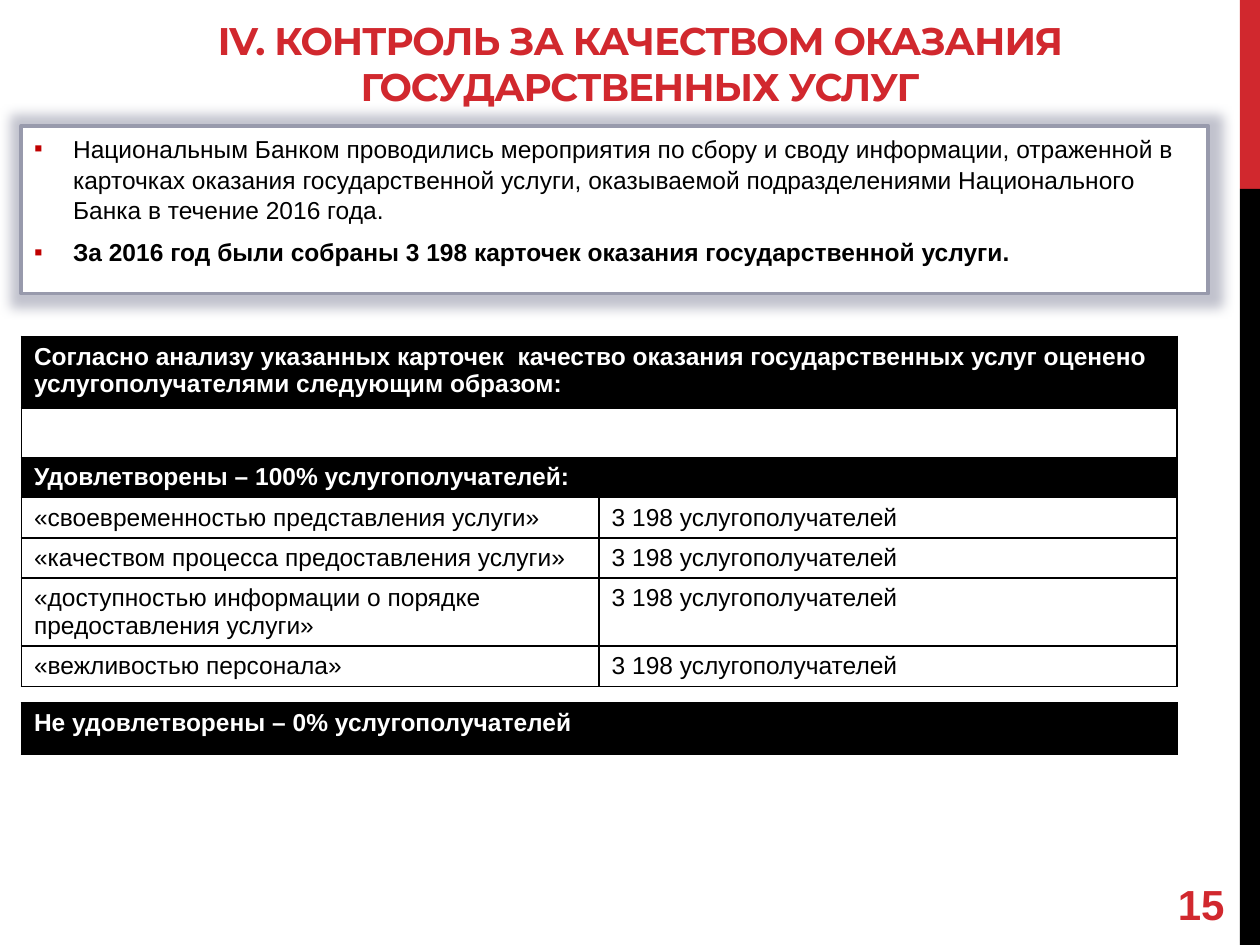
from lxml import etree
from pptx import Presentation
from pptx.dml.color import RGBColor
from pptx.enum import shapes, text
from pptx.oxml import ns
from pptx.util import Inches, Pt

RED = RGBColor(0xD1, 0x28, 0x2E)
BULLET_RED = RGBColor(0xC0, 0x00, 0x00)
BLACK = RGBColor(0, 0, 0)
WHITE = RGBColor(0xFF, 0xFF, 0xFF)
FRAME = RGBColor(0x98, 0x9A, 0xAC)

TITLE = "IV. КОНТРОЛЬ ЗА КАЧЕСТВОМ ОКАЗАНИЯ ГОСУДАРСТВЕННЫХ УСЛУГ"
POINTS = [
    ("Национальным Банком проводились мероприятия по сбору и своду информации, "
     "отраженной в карточках оказания государственной услуги, оказываемой "
     "подразделениями Национального Банка в течение 2016 года.", False),
    ("За 2016 год были собраны 3 198 карточек оказания государственной услуги.", True),
]
COUNT = "3 198 услугополучателей"
# Each row: height, texts (one text spans the row), dark or not
RATINGS = [
    (0.57, ["Согласно анализу указанных карточек  качество оказания государственных "
            "услуг оценено услугополучателями следующим образом:"], True),
    (0.39, [""], False),
    (0.31, ["Удовлетворены – 100% услугополучателей:"], True),
    (0.32, ["«своевременностью представления услуги»", COUNT], False),
    (0.32, ["«качеством процесса предоставления услуги»", COUNT], False),
    (0.54, ["«доступностью информации о порядке предоставления услуги»", COUNT], False),
    (0.32, ["«вежливостью персонала»", COUNT], False),
]
DISSATISFIED = [(0.41, ["Не удовлетворены – 0% услугополучателей"], True)]


def add_xml(parent, tag, **attributes):
    return etree.SubElement(parent, ns.qn(tag), attributes)


def set_box(shape, box):
    for name, length in zip(("left", "top", "width", "height"), box):
        setattr(shape, name, Inches(length))


def format_font(font, color, **values):
    for name, value in {"name": "Arial", "size": Pt(14), "bold": False, **values}.items():
        setattr(font, name, value)
    font.color.rgb = color


def add_side_bar(page, box, color):
    bar = page.shapes.add_shape(shapes.MSO_SHAPE.RECTANGLE, *map(Inches, box))
    bar.shadow.inherit = False
    bar.fill.solid()
    bar.fill.fore_color.rgb = color
    bar.line.fill.background()


def add_title(page, box):
    title = page.shapes.title
    set_box(title, box)
    frame = title.text_frame
    frame.vertical_anchor = text.MSO_ANCHOR.BOTTOM
    frame.auto_size = text.MSO_AUTO_SIZE.NONE
    para = frame.paragraphs[0]
    para.alignment = text.PP_ALIGN.CENTER
    span = para.add_run()
    span.text = TITLE
    format_font(span.font, RED, name="Montserrat", size=Pt(22), bold=True)
    span.font._element.set("spc", "-60")


def add_bullet(para):
    properties = para._p.get_or_add_pPr()
    indent = Inches(0.31)
    properties.set("marL", str(indent))
    properties.set("indent", str(-indent))
    add_xml(add_xml(properties, "a:buClr"), "a:srgbClr", val=str(BULLET_RED))
    add_xml(properties, "a:buFont", typeface="Arial")
    add_xml(properties, "a:buChar", char="▪")


def add_glow(shape, color, radius):
    effects = add_xml(shape._element.spPr, "a:effectLst")
    glow = add_xml(effects, "a:glow", rad=str(radius))
    add_xml(add_xml(glow, "a:srgbClr", val=str(color)), "a:alpha", val="60000")


def add_summary(page, box):
    summary = page.placeholders[1]
    set_box(summary, box)
    summary.fill.solid()
    summary.fill.fore_color.rgb = WHITE
    summary.line.color.rgb = FRAME
    summary.line.width = Pt(2.25)
    add_glow(summary, FRAME, Inches(0.2))
    frame = summary.text_frame
    frame.auto_size = text.MSO_AUTO_SIZE.NONE
    for index, (words, bold) in enumerate(POINTS):
        para = frame.add_paragraph() if index else frame.paragraphs[0]
        para.space_before = Pt(6 if index else 0)
        para.line_spacing = 1.05
        add_bullet(para)
        span = para.add_run()
        span.text = words
        format_font(span.font, BLACK, bold=bold)


def format_cell(cell, words, dark):
    # Borders come before the fill in the cell properties
    properties = cell._tc.get_or_add_tcPr()
    for side in ("a:lnL", "a:lnR", "a:lnT", "a:lnB"):
        line = add_xml(properties, side, w=str(Pt(1)))
        add_xml(add_xml(line, "a:solidFill"), "a:srgbClr", val=str(BLACK))
    cell.fill.solid()
    cell.fill.fore_color.rgb = BLACK if dark else WHITE
    para = cell.text_frame.paragraphs[0]
    if words:
        span = para.add_run()
        span.text = words
        format_font(span.font, WHITE if dark else BLACK, bold=dark)
    else:
        add_xml(para._p, "a:endParaRPr", sz="1400")


def add_ratings(page, box, rows):
    columns = max(len(texts) for _, texts, _ in rows)
    table = page.shapes.add_table(len(rows), columns, *map(Inches, box)).table
    table.first_row = table.horz_banding = False
    for index, (height, texts, dark) in enumerate(rows):
        table.rows[index].height = Inches(height)
        if len(texts) < columns:
            table.cell(index, 0).merge(table.cell(index, columns - 1))
        for column in range(columns):
            words = texts[column] if column < len(texts) else ""
            format_cell(table.cell(index, column), words, dark)


def add_page_number(page, box, number):
    frame = page.shapes.add_textbox(*map(Inches, box)).text_frame
    frame.word_wrap = True
    frame.vertical_anchor = text.MSO_ANCHOR.MIDDLE
    span = frame.paragraphs[0].add_run()
    span.text = number
    format_font(span.font, RED, size=Pt(24), bold=True)


def main():
    deck = Presentation()
    deck.slide_width, deck.slide_height = Inches(10), Inches(7.5)
    page = deck.slides.add_slide(deck.slide_layouts[1])
    # Side stripe
    add_side_bar(page, (9.84, 0, 0.16, 1.5), RED)
    add_side_bar(page, (9.84, 1.5, 0.16, 6), BLACK)
    # Heading and summary
    add_title(page, (0.58, 0.17, 9, 0.75))
    add_summary(page, (0.17, 1, 9.42, 1.33))
    # Survey results
    add_ratings(page, (0.17, 2.67, 9.17, 2.77), RATINGS)
    add_ratings(page, (0.17, 5.58, 9.17, 0.41), DISSATISFIED)
    add_page_number(page, (9.25, 6.92, 0.67, 0.5), "15")
    deck.save("out.pptx")


if __name__ == "__main__":
    main()
